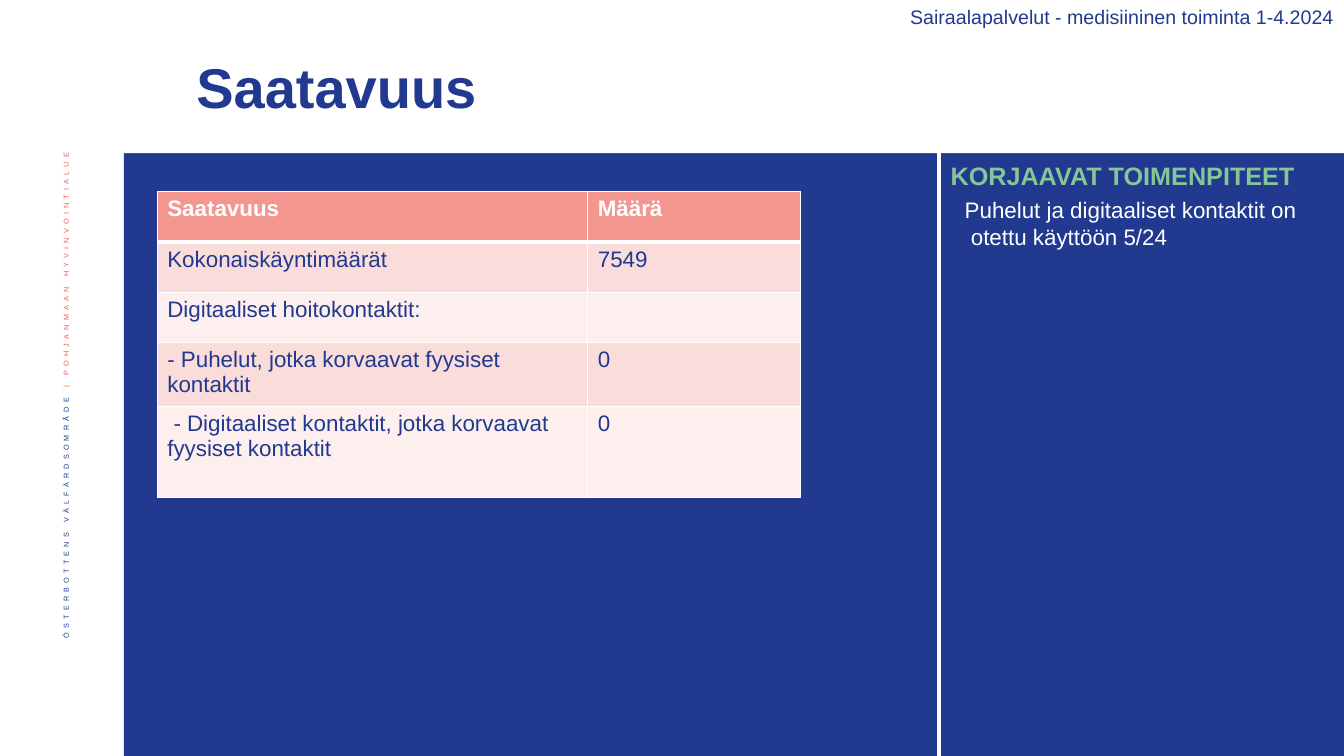
from lxml.etree import SubElement
from pptx import Presentation
from pptx.dml.color import RGBColor
from pptx.enum.shapes import MSO_CONNECTOR as Connector, MSO_SHAPE as Shape
from pptx.enum.text import MSO_ANCHOR as Anchor, PP_ALIGN as Align
from pptx.oxml.ns import qn
from pptx.util import Inches, Pt

NAVY, WHITE, GREEN, CORAL = "213A8F", "FFFFFF", "85C598", "EB5C5F"


def rgb(value):
    return RGBColor.from_string(value)


def style(paragraph, size, color, bold=False):
    for run in paragraph.runs:
        run.font.name = "Arial"
        run.font.size = Pt(size)
        run.font.bold = bold
        run.font.color.rgb = rgb(color)


deck = Presentation()
deck.slide_width, deck.slide_height = Inches(13.33), Inches(7.5)
slide = deck.slides.add_slide(deck.slide_layouts[6])
shapes = slide.shapes

for left, top, width, height, color in [
    (1.23, 0, 12.1, 7.5, NAVY),
    (1.15, 0, 12.18, 1.52, WHITE),
]:
    panel = shapes.add_shape(Shape.RECTANGLE, Inches(left), Inches(top), Inches(width), Inches(height))
    panel.shadow.inherit = False
    panel.fill.solid()
    panel.fill.fore_color.rgb = rgb(color)
    panel.line.fill.background()

divider = shapes.add_connector(Connector.STRAIGHT, Inches(9.31), Inches(0.97), Inches(9.31), Inches(7.5))
divider.line.color.rgb = rgb(WHITE)
divider.line.width = Pt(3)
SubElement(divider._element.spPr, qn("a:effectLst"))

organisation = shapes.add_textbox(Inches(0.42), Inches(1.42), Inches(0.52), Inches(5.73)).text_frame
organisation.word_wrap = True
organisation.vertical_anchor = Anchor.MIDDLE
organisation._txBody.bodyPr.set("vert", "vert270")
names = organisation.paragraphs[0]
names.alignment = Align.RIGHT
names.line_spacing = 0.9
for name in ["ÖSTERBOTTENS VÄLFÄRDSOMRÅDE ", "| POHJANMAAN HYVINVOINTIALUE"]:
    names.add_run().text = name
style(names, 9, NAVY)
names.runs[1].font.color.rgb = rgb(CORAL)
for run in names.runs:
    run.font._element.set("baseline", "30000")
    run.font._element.set("spc", "300")

for text, left, top, width, height, size, color, bold, align, anchor in [
    ("Saatavuus", 1.85, 0.47, 10.2, 0.85, 40, NAVY, True, Align.LEFT, Anchor.MIDDLE),
    ("KORJAAVAT TOIMENPITEET", 9.33, 1.54, 3.94, 0.4, 18, GREEN, True, Align.LEFT, Anchor.TOP),
    ("Sairaalapalvelut - medisiininen toiminta 1-4.2024", 7.55, 0, 5.78, 0.34, 14, NAVY, False,
     Align.RIGHT, Anchor.TOP),
    ("Puhelut ja digitaaliset kontaktit on\n otettu käyttöön 5/24", 9.47, 1.9, 3.53, 0.64, 16, WHITE, False,
     Align.LEFT, Anchor.TOP),
]:
    frame = shapes.add_textbox(Inches(left), Inches(top), Inches(width), Inches(height)).text_frame
    frame.word_wrap = True
    frame.vertical_anchor = anchor
    frame.text = text
    for paragraph in frame.paragraphs:
        paragraph.alignment = align
        style(paragraph, size, color, bold)
    if size == 40:
        frame.paragraphs[0].line_spacing = 0.9

visits = [
    ("Saatavuus", "Määrä"),
    ("Kokonaiskäyntimäärät", "7549"),
    ("Digitaaliset hoitokontaktit:", ""),
    ("- Puhelut, jotka korvaavat fyysiset kontaktit", "0"),
    (" - Digitaaliset kontaktit, jotka korvaavat fyysiset kontaktit", "0"),
]
row_heights = [0.5, 0.5, 0.5, 0.63, 0.9]
row_fills = ["F39690", "FADDDB", "FDEFEE", "FADDDB", "FDEFEE"]
table = shapes.add_table(5, 2, Inches(1.56), Inches(1.9), Inches(6.38), Inches(3.03)).table
table.columns[0].width, table.columns[1].width = Inches(4.27), Inches(2.11)
for r, (values, height, fill) in enumerate(zip(visits, row_heights, row_fills)):
    table.rows[r].height = Inches(height)
    for c, value in enumerate(values):
        cell = table.cell(r, c)
        cell.text = value
        style(cell.text_frame.paragraphs[0], 16, NAVY if r else WHITE, r == 0)
        for side in "LRTB":
            thick = (r, side) in [(0, "B"), (1, "T")]
            border = SubElement(cell._tc.get_or_add_tcPr(), qn(f"a:ln{side}"), w=str(Pt(3 if thick else 1)))
            SubElement(SubElement(border, qn("a:solidFill")), qn("a:srgbClr"), val=WHITE)
        cell.fill.solid()
        cell.fill.fore_color.rgb = rgb(fill)

deck.save("out.pptx")
